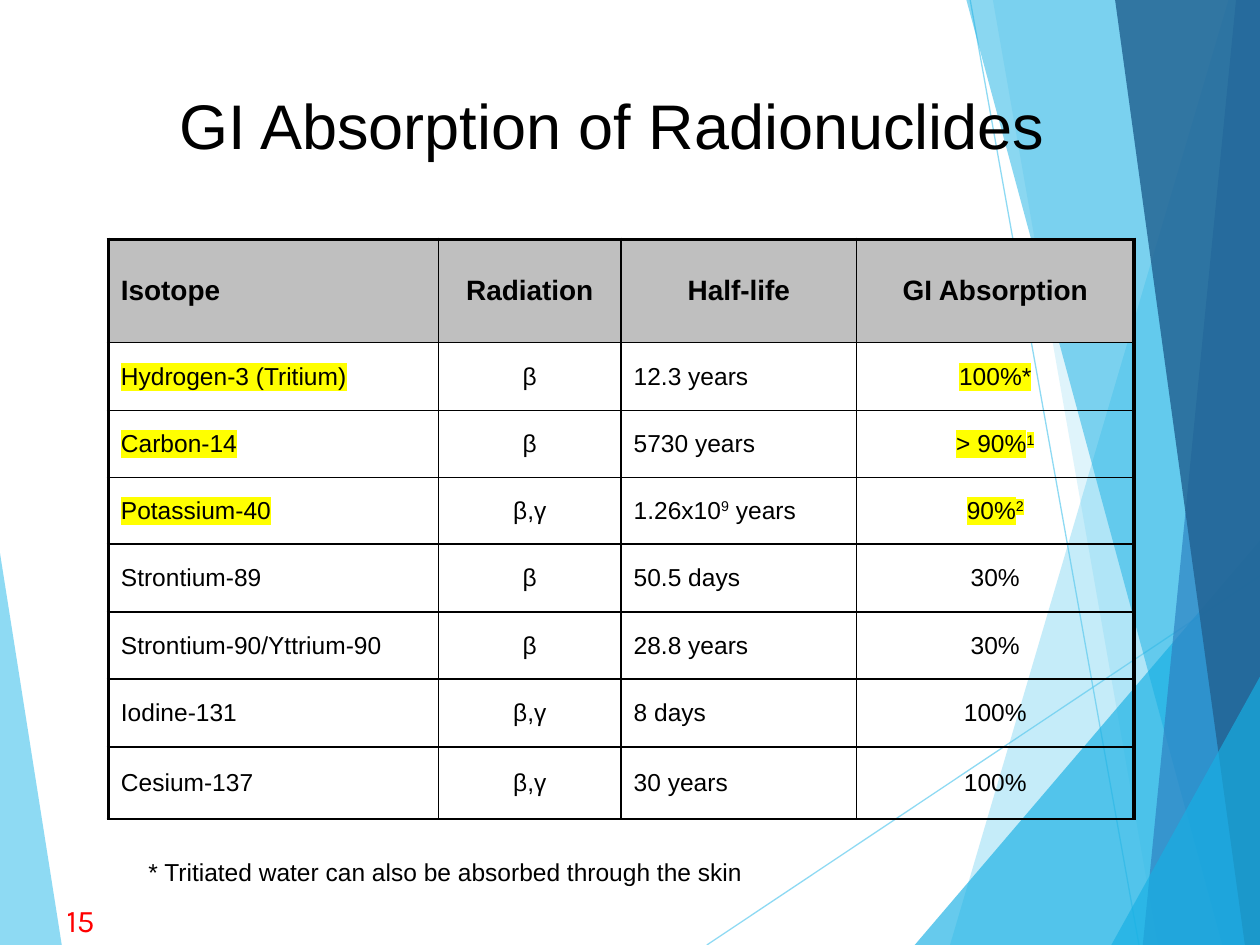
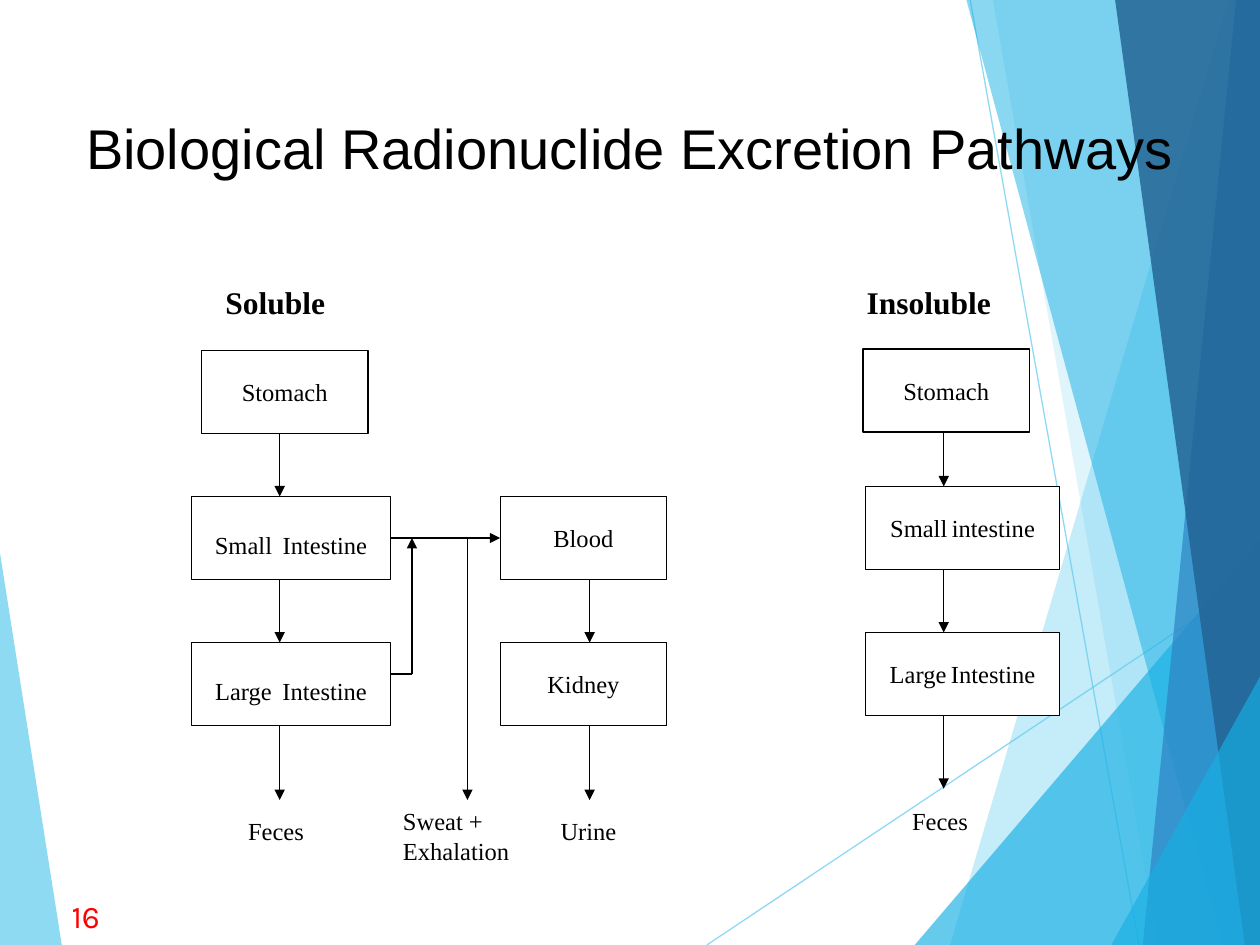
from lxml import etree
from pptx import Presentation
from pptx.dml.color import RGBColor
from pptx.enum import shapes, text
from pptx.oxml.ns import qn
from pptx.util import Inches, Pt

BLACK, WHITE, RED = "000000", "FFFFFF", "FF0000"
SKY, CYAN, BLUE, NAVY = "5FCBEF", "17B0E4", "2E83C3", "226292"
GREY, YELLOW = "BFBFBF", "FFFF00"
SANS, SERIF, NUMBER_FONT = "Arial", "Times New Roman", "Karla"
LEFT, CENTER = text.PP_ALIGN.LEFT, text.PP_ALIGN.CENTER
rgb = RGBColor.from_string


def write(frame, content, size, font=SANS, align=LEFT, bold=False, color=BLACK):
    """Fill a text frame; a newline starts a paragraph and a bar starts a run."""
    frame.word_wrap = True
    for index, line in enumerate(content.split("\n")):
        paragraph = frame.add_paragraph() if index else frame.paragraphs[0]
        for piece in line.split("|"):
            paragraph.add_run().text = piece
        paragraph.alignment = align
        paragraph.font.size = Pt(size)
        paragraph.font.name = font
        paragraph.font.bold = bold
        paragraph.font.color.rgb = rgb(color)


def draw_line(slide, start, end, color=BLACK, arrow=True):
    connector = slide.shapes.add_connector(
        shapes.MSO_CONNECTOR.STRAIGHT, *map(Inches, start + end))
    connector.line.color.rgb = rgb(color)
    connector.line.width = Pt(0.75)
    properties = connector.element.spPr
    if arrow:
        etree.SubElement(properties.find(qn("a:ln")), qn("a:tailEnd"), type="triangle")
    etree.SubElement(properties, qn("a:effectLst"))
    return connector


presentation = Presentation()
presentation.slide_width, presentation.slide_height = Inches(10), Inches(7.5)

# Shared backdrop, title style and slide number
backdrop_lines = [((5.61, 7.5), (10, 4.57)), ((7.7, 0), (9.04, 7.5))]
backdrop_facets = [
    (SKY, 70, [(0, 4.39), (0.49, 7.5), (0, 7.5)]),
    (SKY, 36, [(9.75, 0), (7.54, 7.5), (10, 7.5), (10, 0)]),
    (SKY, 20, [(7.88, 0), (9.19, 7.5), (10, 7.5), (10, 0)]),
    (CYAN, 66, [(7.26, 7.5), (10, 4.29), (10, 7.5)]),
    (CYAN, 50, [(7.67, 0), (9.7, 7.5), (10, 7.5), (10, 0)]),
    (BLUE, 70, [(9.81, 0), (9.07, 7.5), (10, 7.5), (10, 0)]),
    (NAVY, 82, [(8.85, 0), (9.88, 7.5), (10, 7.5), (10, 0)]),
    (CYAN, 66, [(8.82, 7.5), (10, 5.37), (10, 7.5)]),
]
slide_heads = [
    ("GI Absorption of Radionuclides", 36, (0.86, 0.64, 8, 0.7),
     "15", (0.43, 7.1, 0.51, 0.4)),
    ("Biological Radionuclide Excretion Pathways", 32, (0.46, 0.85, 9.08, 0.64),
     "16", (0.47, 7.07, 0.48, 0.4)),
]
slides = []
for title_text, title_size, title_box, number, number_box in slide_heads:
    slide = presentation.slides.add_slide(presentation.slide_layouts[5])
    slides.append(slide)
    translucent = [(draw_line(slide, start, end, SKY, arrow=False), 70)
                   for start, end in backdrop_lines]
    for color, opacity, corners in backdrop_facets:
        points = [(Inches(x), Inches(y)) for x, y in corners]
        builder = slide.shapes.build_freeform(*points[0])
        builder.add_line_segments(points[1:])
        facet = builder.convert_to_shape()
        facet.shadow.inherit = False
        facet.fill.solid()
        facet.fill.fore_color.rgb = rgb(color)
        facet.line.fill.background()
        translucent.append((facet, opacity))
    for shape, opacity in translucent:
        for color_element in shape.element.spPr.iter(qn("a:srgbClr")):
            etree.SubElement(color_element, qn("a:alpha"), val=str(opacity * 1000))

    title = slide.shapes.title
    title.left, title.top, title.width, title.height = map(Inches, title_box)
    title.text_frame.vertical_anchor = text.MSO_ANCHOR.TOP
    title.text_frame.auto_size = text.MSO_AUTO_SIZE.NONE
    write(title.text_frame, title_text, title_size, align=CENTER)
    slide.shapes.element.append(title.element)  # bring in front of the backdrop

    number_shape = slide.shapes.add_textbox(*map(Inches, number_box))
    write(number_shape.text_frame, number, 18, NUMBER_FONT, color=RED)

absorption_slide, pathway_slide = slides

# Absorption table
isotope_rows = [
    ("Isotope", "Radiation", "Half-life", "GI Absorption"),
    ("Hydrogen-3 (Tritium)", "β", "12.3 years", "100%*"),
    ("Carbon-14", "β", "5730 years", "> 90%|1"),
    ("Potassium-40", "β,γ", "1.26x10|9| years", "90%|2"),
    ("Strontium-89", "β", "50.5 days", "30%"),
    ("Strontium-90/Yttrium-90", "β", "28.8 years", "30%"),
    ("Iodine-131", "β,γ", "8 days", "100%"),
    ("Cesium-137", "β,γ", "30 years", "100%"),
]
column_widths = [2.62, 1.45, 1.87, 2.2]
row_heights = [0.82, 0.54, 0.53, 0.53, 0.54, 0.53, 0.54, 0.57]
highlighted_rows, highlighted_columns = (1, 2, 3), (0, 3)
last_column = len(column_widths) - 1

table = absorption_slide.shapes.add_table(
    len(row_heights), len(column_widths),
    *map(Inches, (0.86, 1.9, sum(column_widths), sum(row_heights)))).table
table.first_row = table.horz_banding = False
for column, width in zip(table.columns, column_widths):
    column.width = Inches(width)
for row, height in zip(table.rows, row_heights):
    row.height = Inches(height)

for row_index, values in enumerate(isotope_rows):
    header = row_index == 0
    for column_index, value in enumerate(values):
        cell = table.cell(row_index, column_index)
        cell.vertical_anchor = text.MSO_ANCHOR.MIDDLE
        left_aligned = column_index == 0 or (column_index == 2 and not header)
        write(cell.text_frame, value, 16 if header else 14,
              align=LEFT if left_aligned else CENTER, bold=header)
        runs = cell.text_frame.paragraphs[0].runs
        for run in runs[1::2]:
            run._r.get_or_add_rPr().set("baseline", "30000")
        if row_index in highlighted_rows and column_index in highlighted_columns:
            for run in runs:
                highlight = etree.SubElement(run._r.get_or_add_rPr(), qn("a:highlight"))
                etree.SubElement(highlight, qn("a:srgbClr"), val=YELLOW)

        outer_edges = {"L": column_index == 0, "R": column_index == last_column,
                       "T": header, "B": False}
        cell_properties = cell._tc.get_or_add_tcPr()
        for side, outer in outer_edges.items():
            border = etree.SubElement(cell_properties, qn(f"a:ln{side}"),
                                      w=str(Pt(2.25 if outer else 1)))
            border_fill = etree.SubElement(border, qn("a:solidFill"))
            etree.SubElement(border_fill, qn("a:srgbClr"), val=BLACK)
        if header:
            cell.fill.solid()
            cell.fill.fore_color.rgb = rgb(GREY)
        else:
            cell.fill.background()

footnote = absorption_slide.shapes.add_textbox(*map(Inches, (1.08, 6.75, 5, 0.33)))
write(footnote.text_frame, "* Tritiated water can also be absorbed through the skin", 14)

# Excretion pathways: arrow x, end of last arrow, size of the gap between words,
# then the organs from top to bottom as name, left, top, width
organ_height = 0.66
pathways = [
    (2.22, 6.35, 24, [("Stomach", 1.6, 2.78, 1.32),
                      ("Small| |Intestine", 1.52, 3.94, 1.58),
                      ("Large| |Intestine", 1.52, 5.1, 1.58)]),
    (4.68, 6.35, 24, [("Blood", 3.97, 3.94, 1.32),
                      ("Kidney", 3.97, 5.1, 1.32)]),
    (7.49, 6.26, 10, [("Stomach", 6.85, 2.77, 1.32),
                      ("Small| |intestine", 6.87, 3.86, 1.54),
                      ("Large| |Intestine", 6.87, 5.02, 1.54)]),
]
for arrow_x, end_y, gap_size, organs in pathways:
    arrow_ends = [top for _, _, top, _ in organs[1:]] + [end_y]
    for (name, left, top, width), arrow_end in zip(organs, arrow_ends):
        organ = pathway_slide.shapes.add_shape(
            shapes.MSO_SHAPE.RECTANGLE, *map(Inches, (left, top, width, organ_height)))
        organ.shadow.inherit = False
        organ.fill.solid()
        organ.fill.fore_color.rgb = rgb(WHITE)
        organ.line.color.rgb = rgb(BLACK)
        organ.line.width = Pt(0.75)
        organ.text_frame.vertical_anchor = text.MSO_ANCHOR.MIDDLE
        write(organ.text_frame, name, 14, SERIF, CENTER)
        for gap in organ.text_frame.paragraphs[0].runs[1::2]:
            gap.font.size = Pt(gap_size)
        draw_line(pathway_slide, (arrow_x, top + organ_height), (arrow_x, arrow_end))

draw_line(pathway_slide, (3.1, 4.27), (3.97, 4.27))
draw_line(pathway_slide, (3.71, 4.27), (3.71, 6.35))
draw_line(pathway_slide, (3.1, 5.35), (3.27, 5.35), arrow=False)
draw_line(pathway_slide, (3.27, 5.35), (3.27, 4.27))

pathway_labels = [
    ("Soluble", 18, (1.69, 2.2, 1.29, 0.49)),
    ("Insoluble", 18, (6.78, 2.2, 1.54, 0.49)),
    ("Feces", 14, (1.87, 6.43, 0.68, 0.33)),
    ("Sweat +\nExhalation", 14, (3.1, 6.35, 1.1, 0.56)),
    ("Urine", 14, (4.35, 6.43, 0.68, 0.33)),
    ("Feces", 14, (7.14, 6.35, 0.68, 0.33)),
]
for label_text, size, box in pathway_labels:
    label = pathway_slide.shapes.add_textbox(*map(Inches, box))
    write(label.text_frame, label_text, size, SERIF, bold=size == 18)

presentation.save("out.pptx")
